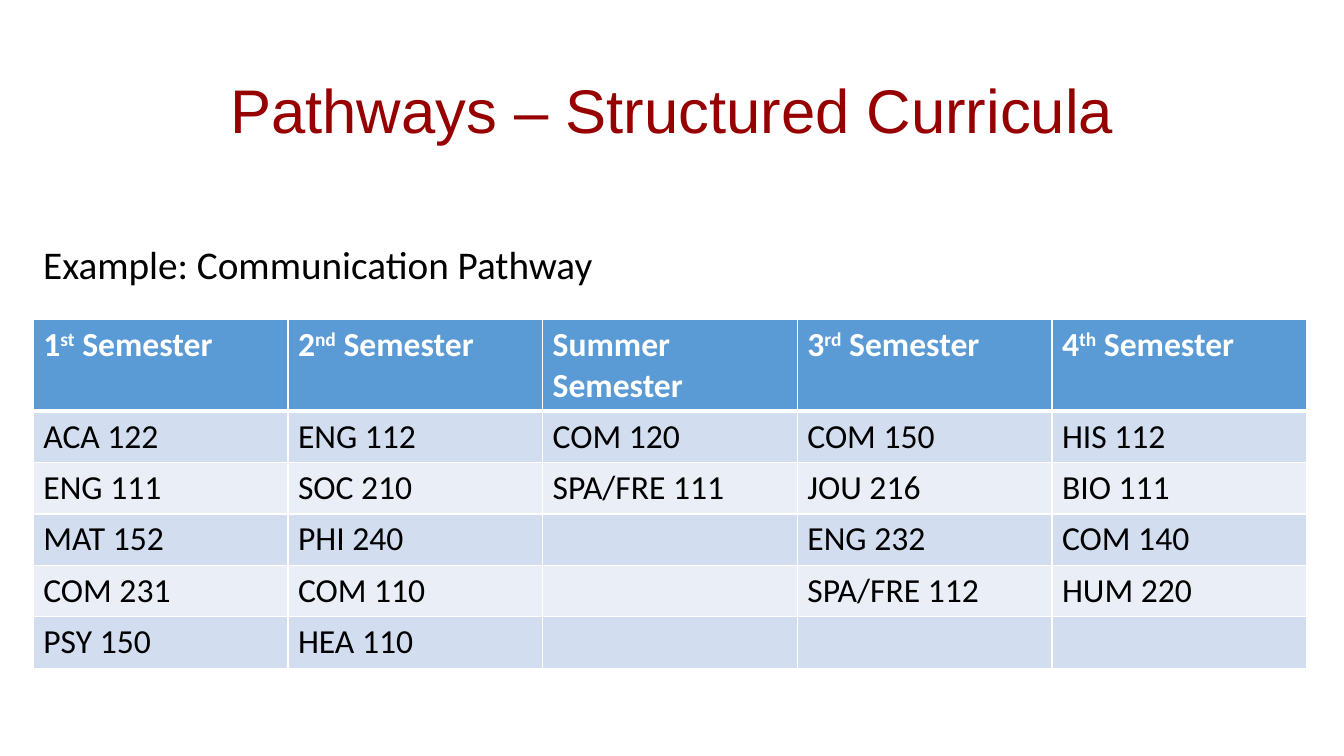
from lxml import etree
from pptx import Presentation
from pptx import util as u
from pptx.dml.color import RGBColor
from pptx.enum import text
from pptx.oxml.ns import qn

COLORS = {
    "title": "960000",
    "body": "000000",
    "white": "FFFFFF",
    "header": "5B9BD5",
    "odd": "D2DEEF",
    "even": "EAEFF7",
}

SEMESTERS = [
    (("1", "st", " Semester"), ["ACA 122", "ENG 111", "MAT 152", "COM 231", "PSY 150"]),
    (("2", "nd", " Semester"), ["ENG 112", "SOC 210", "PHI 240", "COM 110", "HEA 110"]),
    (("Summer Semester",), ["COM 120", "SPA/FRE 111"]),
    (("3", "rd", " Semester"), ["COM 150", "JOU 216", "ENG 232", "SPA/FRE 112"]),
    (("4", "th", " Semester"), ["HIS 112", "BIO 111", "COM 140", "HUM 220"]),
]
COURSE_ROWS = 5
COLUMN_WIDTH, HEADER_HEIGHT, ROW_HEIGHT = 2.526, 0.91, 0.51
LEFT, TABLE_TOP = 0.33, 3.17


def format_runs(paragraph, size, color, font="Calibri", bold=False):
    for run in paragraph.runs:
        run.font.name = font
        run.font.size = u.Pt(size)
        run.font.bold = bold
        run.font.color.rgb = RGBColor.from_string(COLORS[color])


def style_cell(cell, fill, bottom_width):
    properties = cell._tc.get_or_add_tcPr()
    for side, width in (("L", 1), ("R", 1), ("T", 1), ("B", bottom_width)):
        line = etree.SubElement(properties, qn(f"a:ln{side}"), w=str(u.Pt(width)))
        solid = etree.SubElement(line, qn("a:solidFill"))
        etree.SubElement(solid, qn("a:srgbClr"), val=COLORS["white"])
    cell.fill.solid()
    cell.fill.fore_color.rgb = RGBColor.from_string(COLORS[fill])


presentation = Presentation()
presentation.slide_width = u.Inches(13.33)
presentation.slide_height = u.Inches(7.5)
slide = presentation.slides.add_slide(presentation.slide_layouts[6])

headings = [
    ("Pathways – Structured Curricula", (0.92, 0.4, 11.5, 1.45), 44, "title", "Arial",
     text.PP_ALIGN.CENTER, text.MSO_ANCHOR.MIDDLE, 0),
    ("Example: Communication Pathway", (LEFT, 2.39, 8.25, 0.56), 28, "body", "Calibri",
     text.PP_ALIGN.LEFT, text.MSO_ANCHOR.TOP, 10),
]
for wording, box, size, color, font, alignment, anchor, space_before in headings:
    shape = slide.shapes.add_textbox(*(u.Inches(length) for length in box))
    shape.text_frame.word_wrap = True
    shape.text_frame.vertical_anchor = anchor
    shape.text_frame.text = wording
    paragraph = shape.text_frame.paragraphs[0]
    paragraph.alignment = alignment
    paragraph.line_spacing = 0.9
    paragraph.space_before = u.Pt(space_before)
    format_runs(paragraph, size, color, font)

table = slide.shapes.add_table(
    COURSE_ROWS + 1, len(SEMESTERS), u.Inches(LEFT), u.Inches(TABLE_TOP),
    u.Inches(COLUMN_WIDTH * len(SEMESTERS)),
    u.Inches(HEADER_HEIGHT + ROW_HEIGHT * COURSE_ROWS),
).table
for row_index, row in enumerate(table.rows):
    row.height = u.Inches(ROW_HEIGHT if row_index else HEADER_HEIGHT)

for column_index, (name_parts, courses) in enumerate(SEMESTERS):
    table.columns[column_index].width = u.Inches(COLUMN_WIDTH)

    header = table.cell(0, column_index)
    style_cell(header, "header", 3)
    paragraph = header.text_frame.paragraphs[0]
    for part in name_parts:
        paragraph.add_run().text = part
    format_runs(paragraph, 24, "white", bold=True)
    if len(name_parts) > 1:
        paragraph.runs[1].font._element.set("baseline", "30000")

    for row_index in range(1, COURSE_ROWS + 1):
        cell = table.cell(row_index, column_index)
        style_cell(cell, "odd" if row_index % 2 else "even", 1)
        if row_index <= len(courses):
            cell.text_frame.text = courses[row_index - 1]
            format_runs(cell.text_frame.paragraphs[0], 24, "body")

for column_index in range(len(SEMESTERS)):
    top_line = table.cell(1, column_index)._tc.tcPr.find(qn("a:lnT"))
    top_line.set("w", str(u.Pt(3)))

presentation.save("out.pptx")
